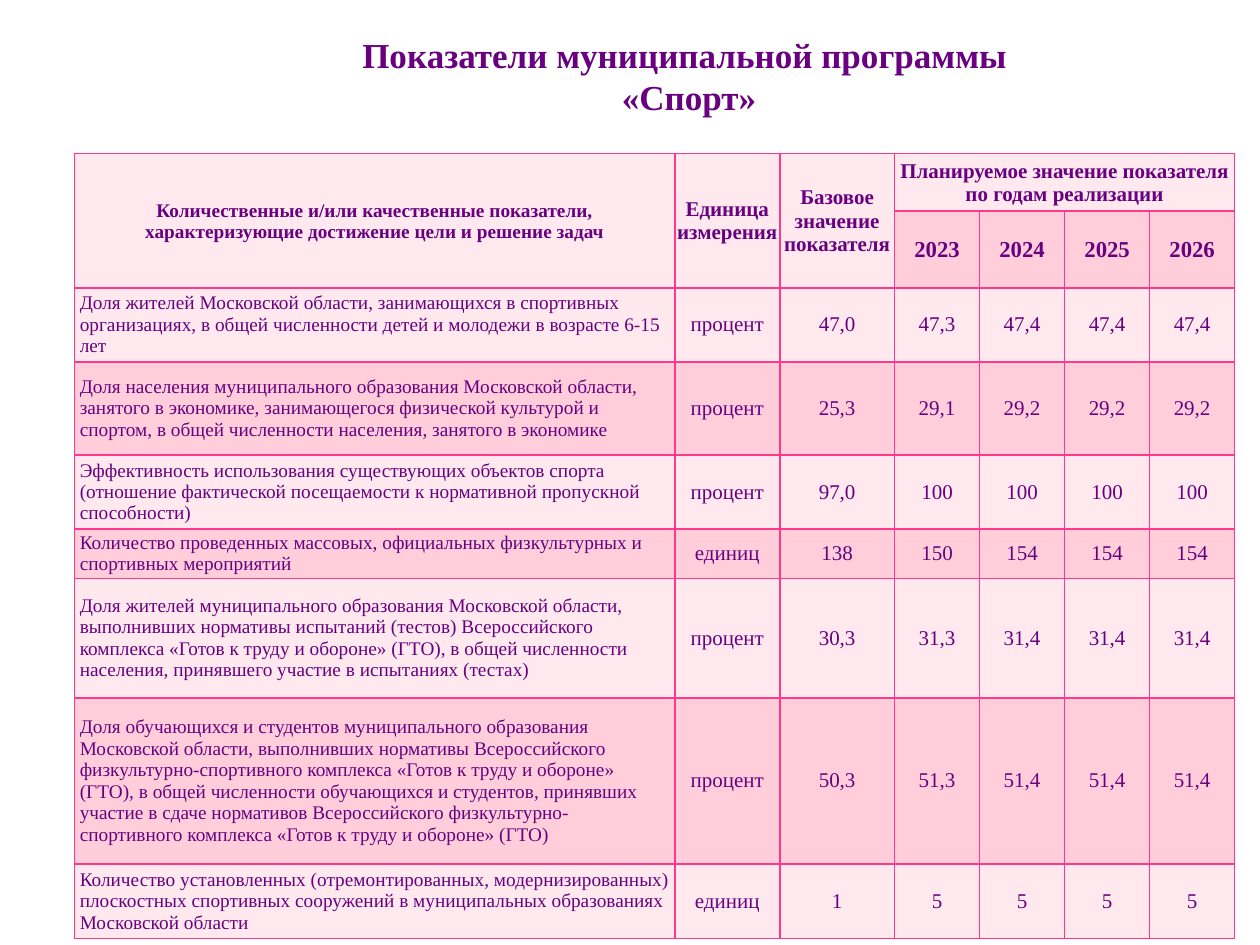
from lxml import etree
from pptx import Presentation
from pptx.dml.color import RGBColor
from pptx.enum.text import MSO_ANCHOR, PP_ALIGN
from pptx.oxml.ns import qn
from pptx.util import Pt

CENTER, LEFT = PP_ALIGN.CENTER, PP_ALIGN.LEFT
MIDDLE = MSO_ANCHOR.MIDDLE

COLORS = {"text": "68007F", "border": "FF388C", "light": "FFE8EE", "dark": "FFCEDA"}
FONT = "Times New Roman"

TITLE = "Показатели муниципальной программы \v«Спорт»"
HEADERS = [
    "Количественные и/или качественные показатели, характеризующие достижение цели и решение задач",
    "Единица измерения",
    "Базовое значение показателя",
    "Планируемое значение показателя по годам реализации",
]
YEARS = ["2023", "2024", "2025", "2026"]
INDICATORS = [
    ("Доля жителей Московской области, занимающихся в спортивных организациях, "
     "в общей численности детей и молодежи в возрасте 6-15 лет",
     "процент", "47,0", "47,3", "47,4", "47,4", "47,4"),
    ("Доля населения муниципального образования Московской области, занятого в экономике, "
     "занимающегося физической культурой и спортом, в общей численности населения, "
     "занятого в экономике",
     "процент", "25,3", "29,1", "29,2", "29,2", "29,2"),
    ("Эффективность использования существующих объектов спорта (отношение фактической "
     "посещаемости к нормативной пропускной способности)",
     "процент", "97,0", "100", "100", "100", "100"),
    ("Количество проведенных массовых, официальных физкультурных и спортивных мероприятий",
     "единиц", "138", "150", "154", "154", "154"),
    ("Доля жителей муниципального образования Московской области, выполнивших нормативы "
     "испытаний (тестов) Всероссийского комплекса «Готов к труду и обороне» (ГТО), "
     "в общей численности населения, принявшего участие в испытаниях (тестах)",
     "процент", "30,3", "31,3", "31,4", "31,4", "31,4"),
    ("Доля обучающихся и студентов муниципального образования Московской области, "
     "выполнивших нормативы Всероссийского физкультурно-спортивного комплекса "
     "«Готов к труду и обороне» (ГТО), в общей численности обучающихся и студентов, "
     "принявших участие в сдаче нормативов Всероссийского физкультурно-спортивного "
     "комплекса «Готов к труду и обороне» (ГТО)",
     "процент", "50,3", "51,3", "51,4", "51,4", "51,4"),
    ("Количество установленных (отремонтированных, модернизированных) плоскостных "
     "спортивных сооружений в муниципальных образованиях Московской области",
     "единиц", "1", "5", "5", "5", "5"),
]

COLUMN_WIDTHS = [343, 60, 65.6] + [48.6] * len(YEARS)
ROW_HEIGHTS = [33, 40.6, 42.3, 53.2, 42.3, 28.3, 68.2, 95, 42.5]
HEADER_INSETS = (0.72, 0.72, 0.72, 0)
NAME_INSETS = (3, 0, 3, 0)
VALUE_INSETS = (3, 5, 3, 5)


def set_margins(target, insets):
    for side, inset in zip(("left", "top", "right", "bottom"), insets):
        setattr(target, f"margin_{side}", Pt(inset))


def write_text(frame, text, size, bold=False, align=CENTER):
    para = frame.paragraphs[0]
    para.text = text
    para.alignment = align
    formats = {"name": FONT, "size": Pt(size), "bold": bold}
    for span in para.runs:
        for name, value in formats.items():
            setattr(span.font, name, value)
        span.font.color.rgb = RGBColor.from_string(COLORS["text"])


def add_borders(cell):
    properties = cell._tc.get_or_add_tcPr()
    for position, side in enumerate(("lnL", "lnR", "lnT", "lnB")):
        line = etree.Element(qn(f"a:{side}"), w=str(int(Pt(1))))
        fill = etree.SubElement(line, qn("a:solidFill"))
        etree.SubElement(fill, qn("a:srgbClr"), val=COLORS["border"])
        properties.insert(position, line)


def fill_cell(cell, text, insets, size, bold=False, align=CENTER):
    write_text(cell.text_frame, text, size, bold, align)
    set_margins(cell, insets)
    cell.vertical_anchor = MIDDLE


def add_title(page, left, top, width, height):
    box = page.shapes.add_textbox(Pt(left), Pt(top), Pt(width), Pt(height))
    frame = box.text_frame
    frame.word_wrap = True
    frame.vertical_anchor = MIDDLE
    write_text(frame, TITLE, 20, bold=True)


def add_indicators(page, left, top, width, height):
    table = page.shapes.add_table(
        len(ROW_HEIGHTS), len(COLUMN_WIDTHS), Pt(left), Pt(top), Pt(width), Pt(height)
    ).table
    for column, size in zip(table.columns, COLUMN_WIDTHS):
        column.width = Pt(size)
    for row, size in zip(table.rows, ROW_HEIGHTS):
        row.height = Pt(size)

    for row_index, row in enumerate(table.rows):
        shade = COLORS["dark" if row_index % 2 else "light"]
        for cell in row.cells:
            cell.fill.solid()
            cell.fill.fore_color.rgb = RGBColor.from_string(shade)
            set_margins(cell, HEADER_INSETS)
            add_borders(cell)

    first_year = len(HEADERS) - 1
    for column in range(first_year):
        table.cell(0, column).merge(table.cell(1, column))
    table.cell(0, first_year).merge(table.cell(0, len(COLUMN_WIDTHS) - 1))

    for column, text in enumerate(HEADERS):
        fill_cell(table.cell(0, column), text, HEADER_INSETS, 12 if column else 11, bold=True)
    for column, year in enumerate(YEARS, first_year):
        fill_cell(table.cell(1, column), year, HEADER_INSETS, 13, bold=True)
    for row_index, (name, *values) in enumerate(INDICATORS, 2):
        fill_cell(table.cell(row_index, 0), name, NAME_INSETS, 11, align=LEFT)
        for column, value in enumerate(values, 1):
            fill_cell(table.cell(row_index, column), value, VALUE_INSETS, 12)


def main():
    deck = Presentation()
    deck.slide_width, deck.slide_height = Pt(720), Pt(540)
    page = deck.slides.add_slide(deck.slide_layouts[6])
    add_title(page, 67.5, 26, 652.5, 34)
    add_indicators(page, 42.6, 87.6, sum(COLUMN_WIDTHS), sum(ROW_HEIGHTS))
    deck.save("out.pptx")


if __name__ == "__main__":
    main()
